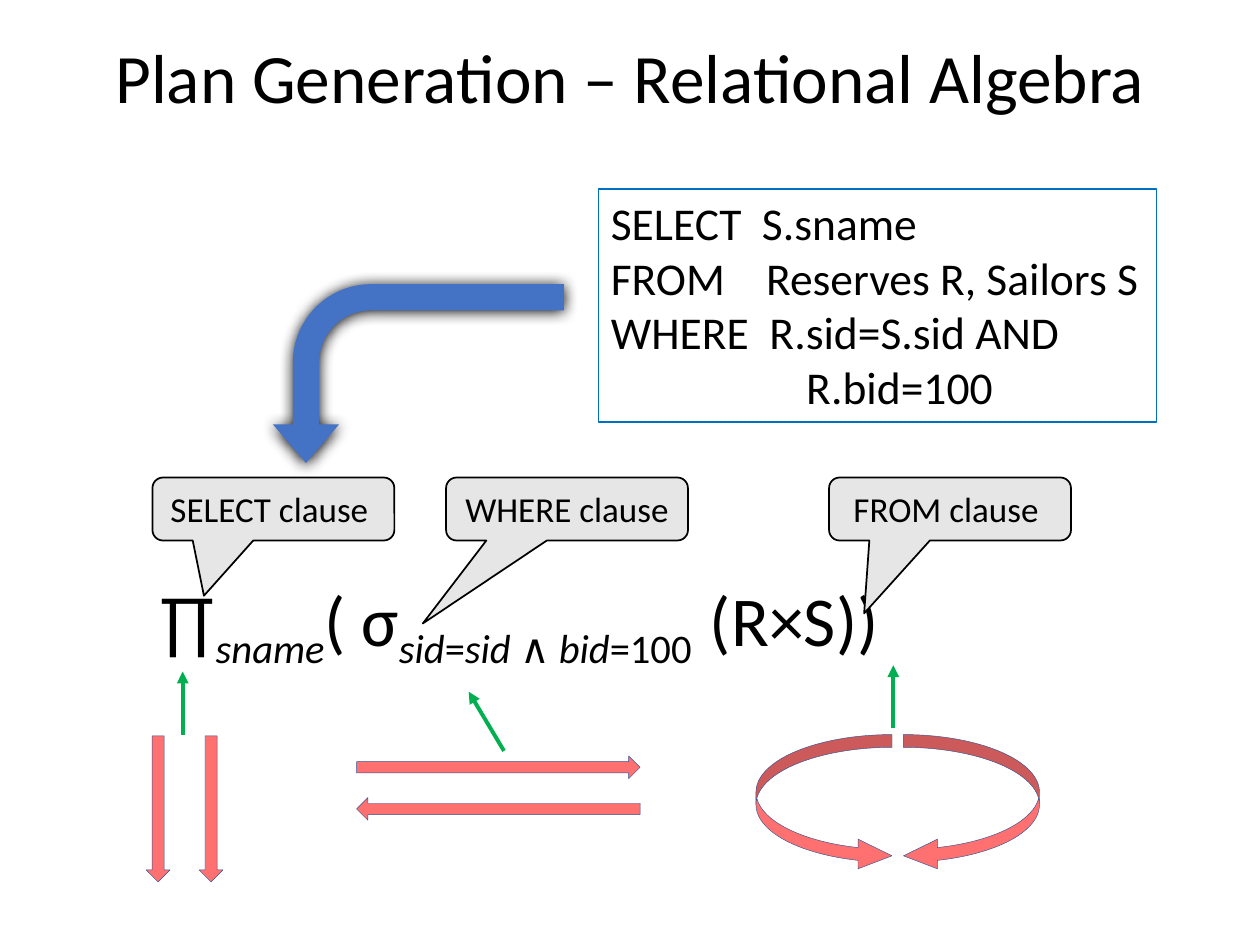
from dataclasses import dataclass

from lxml import etree
from pptx import Presentation
from pptx.dml.color import RGBColor
from pptx.enum import shapes, text
from pptx.oxml import ns
from pptx.util import Inches, Pt

SHAPE = shapes.MSO_SHAPE


@dataclass(frozen=True)
class Theme:
    font: str = "Calibri"
    ink: str = "000000"
    query_line: str = "0070C0"
    callout_fill: str = "E6E6E6"
    flow: str = "4472C4"
    data_fill: str = "FF7171"
    data_line: str = "325491"
    pointer: str = "00B050"
    title_size: float = 39.6
    query_size: float = 26
    algebra_size: float = 40
    callout_size: float = 20


@dataclass(frozen=True)
class Callout:
    label: str
    left: float
    tip_x: float
    tip_y: float


@dataclass(frozen=True)
class Arrow:
    kind: SHAPE
    left: float
    top: float
    width: float
    height: float
    rotation: float = 0
    flip: bool = False
    adjust: tuple[float, ...] = ()


@dataclass(frozen=True)
class Pointer:
    start: tuple[float, float]
    end: tuple[float, float]


THEME = Theme()

QUERY = (
    "SELECT  S.sname",
    "FROM    Reserves R, Sailors S",
    "WHERE  R.sid=S.sid AND",
    "                   R.bid=100",
)

# Text, italic, subscript
ALGEBRA = (
    ("∏", False, False),
    ("sname", True, True),
    ("( σ", False, False),
    ("sid", True, True),
    ("=", False, True),
    ("sid", True, True),
    (" ∧ ", False, True),
    ("bid", True, True),
    ("=100  ", False, True),
    ("(R×S))", False, False),
)

CALLOUTS = (
    Callout("FROM clause ", 6.58, -0.355, 1.657),
    Callout("WHERE clause ", 3.54, -0.596, 1.817),
    Callout("SELECT clause ", 1.21, -0.287, 1.377),
)

FLOW_ARROW = Arrow(SHAPE.BENT_ARROW, 2.61, 1.81, 1.42, 2.31, 270, True,
                   (0.147, 0.185, 0.216, 0.438))

CURVE = (0.094, 0.218, 0.25)
DATA_ARROWS = (
    Arrow(SHAPE.CURVED_LEFT_ARROW, 7.17, 5.83, 1.08, 1.08, adjust=CURVE),
    Arrow(SHAPE.CURVED_LEFT_ARROW, 6, 5.83, 1.08, 1.08, flip=True, adjust=CURVE),
    Arrow(SHAPE.RIGHT_ARROW, 2.83, 6, 2.25, 0.18),
    Arrow(SHAPE.RIGHT_ARROW, 2.83, 6.33, 2.25, 0.18, rotation=180),
    Arrow(SHAPE.DOWN_ARROW, 1.58, 5.84, 0.19, 1.16),
    Arrow(SHAPE.DOWN_ARROW, 1.16, 5.84, 0.19, 1.16),
)

POINTERS = (
    Pointer((7.09, 5.78), (7.09, 5.28)),
    Pointer((4, 5.96), (3.72, 5.49)),
    Pointer((1.45, 5.83), (1.45, 5.33)),
)


def rgb(color: str) -> RGBColor:
    return RGBColor.from_string(color)


def box(left: float, top: float, width: float, height: float) -> tuple:
    return tuple(Inches(v) for v in (left, top, width, height))


def set_font(font, size: float) -> None:
    font.name = THEME.font
    font.size = Pt(size)
    font.color.rgb = rgb(THEME.ink)


def style(sp, fill: str | None, line: str | None, weight: float = 1) -> None:
    sp.shadow.inherit = False
    if fill:
        sp.fill.solid()
        sp.fill.fore_color.rgb = rgb(fill)
    else:
        sp.fill.background()
    if line:
        sp.line.color.rgb = rgb(line)
        sp.line.width = Pt(weight)
    else:
        sp.line.fill.background()


def add_title(s) -> None:
    sp = s.shapes.title
    sp.left, sp.top, sp.width, sp.height = box(0.75, 0.04, 8.5, 1.21)
    tf = sp.text_frame
    tf.text = "Plan Generation – Relational Algebra"
    tf.vertical_anchor = text.MSO_ANCHOR.MIDDLE
    p = tf.paragraphs[0]
    p.alignment = text.PP_ALIGN.CENTER
    p.line_spacing = 0.9
    set_font(p.runs[0].font, THEME.title_size)


def add_query(s) -> None:
    sp = s.shapes.add_shape(SHAPE.RECTANGLE, *box(4.75, 1.5, 4.43, 1.85))
    style(sp, None, THEME.query_line)
    tf = sp.text_frame
    tf.word_wrap = False
    tf.auto_size = text.MSO_AUTO_SIZE.SHAPE_TO_FIT_TEXT
    tf.vertical_anchor = text.MSO_ANCHOR.TOP
    tf.text = "\n".join(QUERY)
    for p in tf.paragraphs:
        p.alignment = text.PP_ALIGN.LEFT
        set_font(p.runs[0].font, THEME.query_size)


def add_algebra(s) -> None:
    tf = s.shapes.add_textbox(*box(1.17, 4.92, 7.75, 0.67)).text_frame
    tf.word_wrap = True
    p = tf.paragraphs[0]
    p.line_spacing = Pt(26)
    pPr = p._p.get_or_add_pPr()
    pPr.set("marL", str(Inches(0.25)))
    pPr.set("indent", str(Inches(-0.25)))
    for words, italic, subscript in ALGEBRA:
        r = p.add_run()
        r.text = words
        set_font(r.font, THEME.algebra_size)
        r.font.italic = italic
        if subscript:
            r._r.get_or_add_rPr().set("baseline", "-25000")


def add_callout(s, callout: Callout) -> None:
    sp = s.shapes.add_shape(SHAPE.ROUNDED_RECTANGULAR_CALLOUT,
                            *box(callout.left, 3.79, 1.92, 0.5))
    for i, value in enumerate((callout.tip_x, callout.tip_y, 0.167)):
        sp.adjustments[i] = value
    style(sp, THEME.callout_fill, THEME.ink)
    tf = sp.text_frame
    tf.text = callout.label
    tf.vertical_anchor = text.MSO_ANCHOR.MIDDLE
    p = tf.paragraphs[0]
    p.alignment = text.PP_ALIGN.CENTER
    set_font(p.runs[0].font, THEME.callout_size)


def add_arrow(s, arrow: Arrow, fill: str, line: str | None):
    sp = s.shapes.add_shape(
        arrow.kind, *box(arrow.left, arrow.top, arrow.width, arrow.height))
    sp.rotation = arrow.rotation
    if arrow.flip:
        sp._element.spPr.find(ns.qn("a:xfrm")).set("flipH", "1")
    for i, value in enumerate(arrow.adjust):
        sp.adjustments[i] = value
    style(sp, fill, line, 0.25)
    return sp


def add_shadow(sp) -> None:
    effects = sp._element.spPr.find(ns.qn("a:effectLst"))
    shadow = etree.SubElement(effects, ns.qn("a:outerShdw"), blurRad=str(Pt(8.5)),
                              dist=str(Pt(1)), dir="5400000", rotWithShape="0")
    etree.SubElement(shadow, ns.qn("a:srgbClr"), val=THEME.ink)


def add_pointer(s, pointer: Pointer) -> None:
    ends = (Inches(v) for v in pointer.start + pointer.end)
    c = s.shapes.add_connector(shapes.MSO_CONNECTOR.STRAIGHT, *ends)
    c.line.color.rgb = rgb(THEME.pointer)
    c.line.width = Pt(2.25)
    etree.SubElement(c.line._get_or_add_ln(), ns.qn("a:tailEnd"), type="triangle")
    etree.SubElement(c._element.spPr, ns.qn("a:effectLst"))


def main() -> None:
    prs = Presentation()
    prs.slide_width, prs.slide_height = Inches(10), Inches(7.5)
    s = prs.slides.add_slide(prs.slide_layouts[5])
    add_title(s)
    add_query(s)
    add_algebra(s)
    for callout in CALLOUTS:
        add_callout(s, callout)
    add_shadow(add_arrow(s, FLOW_ARROW, THEME.flow, None))
    for arrow in DATA_ARROWS:
        add_arrow(s, arrow, THEME.data_fill, THEME.data_line)
    for pointer in POINTERS:
        add_pointer(s, pointer)
    prs.save("out.pptx")


if __name__ == "__main__":
    main()
